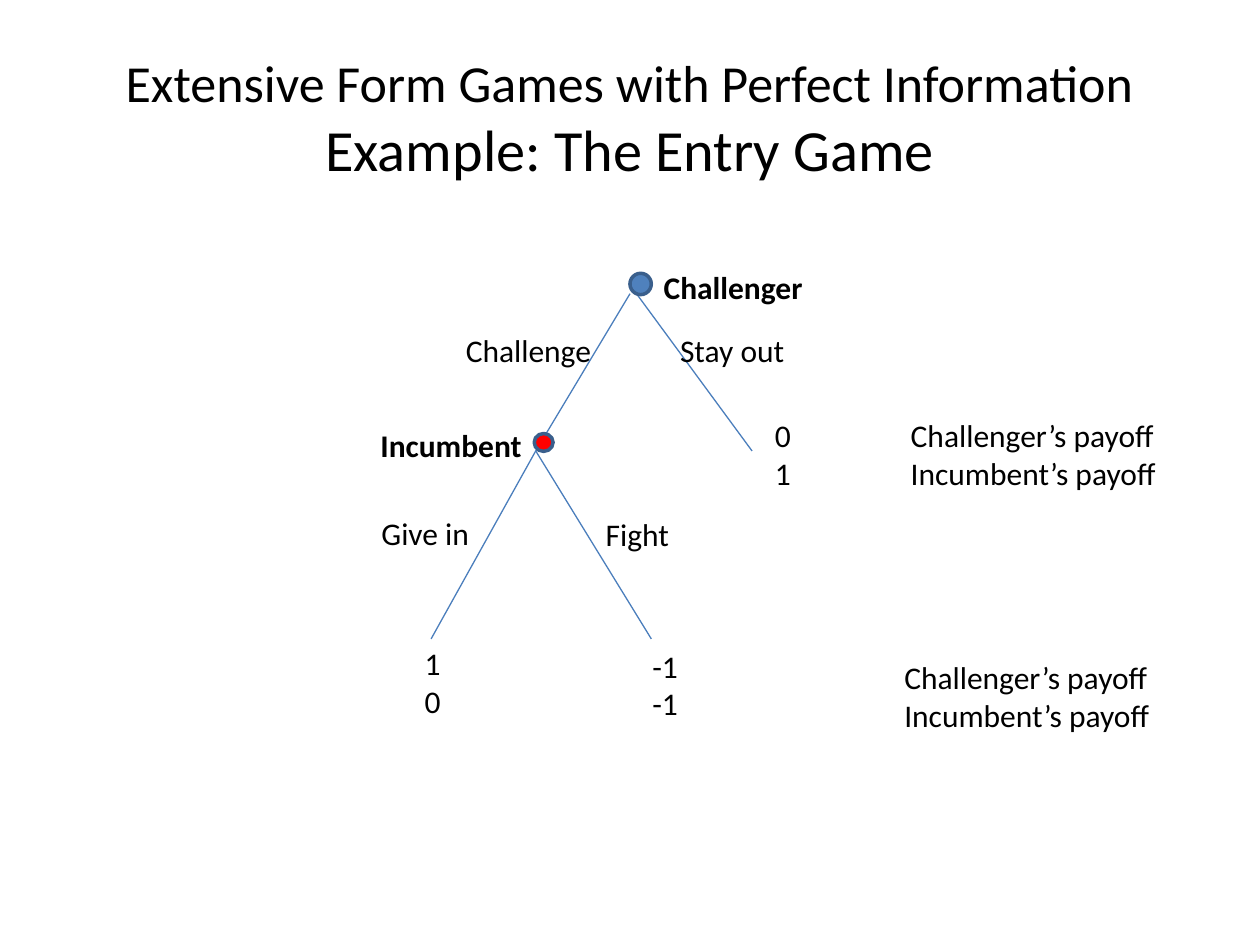
from lxml import etree
from pptx import Presentation
from pptx.dml.color import RGBColor
from pptx.enum.shapes import MSO_CONNECTOR, MSO_SHAPE
from pptx.enum.text import MSO_ANCHOR, PP_ALIGN
from pptx.oxml.ns import qn
from pptx.util import Cm, Pt

LINE = MSO_CONNECTOR.STRAIGHT
OVAL = MSO_SHAPE.OVAL
MID = MSO_ANCHOR.MIDDLE
CENTER = PP_ALIGN.CENTER
FONT = {"name": "Calibri", "size": Pt(18), "bold": False}
CHALLENGER = "Challenger’s payoff"
INCUMBENT = "Incumbent’s payoff"


def tint(code):
    """Turn a hex string into a colour."""
    return RGBColor.from_string(code)


def style(item, values):
    """Set each named value on the item."""
    for name, value in values.items():
        setattr(item, name, value)


def write(para, text, **values):
    """Add a run of black text to a paragraph."""
    run = para.add_run()
    run.text = text
    style(run.font, {**FONT, **values})
    run.font.color.rgb = tint("000000")


def label(slide, box, spot, lines, wrap=True, tab=None, **values):
    """Place lines of text at a spot within the box."""
    left, top, wide, high = spot
    area = slide.shapes.add_textbox(
        Cm(box[0] + left), Cm(box[1] + top), Cm(wide), Cm(high))
    frame = area.text_frame
    frame.word_wrap = wrap
    for i, text in enumerate(lines):
        para = frame.add_paragraph() if i else frame.paragraphs[0]
        write(para, text, **values)
        if tab:
            stops = etree.SubElement(para._p.get_or_add_pPr(), qn("a:tabLst"))
            etree.SubElement(stops, qn("a:tab"), pos=str(Cm(tab)), algn="l")


def branch(slide, box, start, end):
    """Draw one branch between two points within the box."""
    (x1, y1), (x2, y2) = start, end
    left, top = box
    line = slide.shapes.add_connector(
        LINE, Cm(left + x1), Cm(top + y1), Cm(left + x2), Cm(top + y2))
    line.line.color.rgb = tint("4B7EBC")
    line.line.width = Pt(0.75)
    etree.SubElement(line._element.spPr, qn("a:effectLst"))


def node(slide, box, spot, fill):
    """Draw one decision node within the box."""
    left, top, wide, high = spot
    dot = slide.shapes.add_shape(
        OVAL, Cm(box[0] + left), Cm(box[1] + top), Cm(wide), Cm(high))
    dot.shadow.inherit = False
    dot.fill.solid()
    dot.fill.fore_color.rgb = tint(fill)
    dot.line.color.rgb = tint("3A5F8C")
    dot.line.width = Pt(2)


def title(slide, box):
    """Place the heading in the box."""
    area = slide.shapes.add_textbox(*map(Cm, box))
    frame = area.text_frame
    style(frame, {"word_wrap": True, "vertical_anchor": MID})
    para = frame.paragraphs[0]
    para.alignment = CENTER
    write(para, "Extensive Form Games with Perfect Information ", size=Pt(29.7))
    write(para, "Example: The Entry Game", size=Pt(33.3))


def tree(slide, box):
    """Draw the game tree with its players and moves."""
    fork = (3.43, 3.81)
    for start, end in [((5.46, 0.64), (7.79, 3.81)), ((5.33, 0.64), fork),
                       (fork, (5.76, 7.6)), (fork, (1.32, 7.6))]:
        branch(slide, box, start, end)
    node(slide, box, (3.4, 3.46, 0.38, 0.36), "FF0000")
    node(slide, box, (5.33, 0.23, 0.43, 0.43), "4F81BD")
    for text, left, top, wide, wrap, bold in [
            ("Challenger", 5.76, 0, 4.06, True, True),
            ("Stay out", 6.09, 1.27, 3.53, True, False),
            ("Challenge", 1.77, 1.27, 3.07, False, False),
            ("Incumbent", 0.05, 3.18, 3.38, False, True),
            ("Give in", 0.07, 4.96, 3.15, True, False),
            ("Fight", 4.59, 4.98, 2.11, True, False)]:
        label(slide, box, (left, top, wide, 1.02), [text], wrap, bold=bold)


def payoffs(slide, box):
    """Place the payoff pairs and their captions."""
    names = (CHALLENGER, INCUMBENT)
    pairs = [f"{value}\t{name}" for value, name in zip("01", names)]
    label(slide, box, (7.06, 0, 9.4, 1.8), pairs, tab=2.74)
    label(slide, box, (0, 4.6, 0.84, 1.8), "10", False)
    label(slide, box, (4.59, 4.65, 1.09, 1.8), ["-1"] * 2)
    label(slide, box, (9.67, 4.88, 5.56, 1.8), names, False)


def main():
    """Build and save the slide."""
    deck = Presentation()
    style(deck, {"slide_width": Cm(25.4), "slide_height": Cm(19.05)})
    slide = deck.slides.add_slide(deck.slide_layouts[6])
    title(slide, (1.27, 0.76, 22.86, 3.18))
    tree(slide, (7.37, 5.28))
    payoffs(slide, (8.31, 8.26))
    deck.save("out.pptx")


if __name__ == "__main__":
    main()
